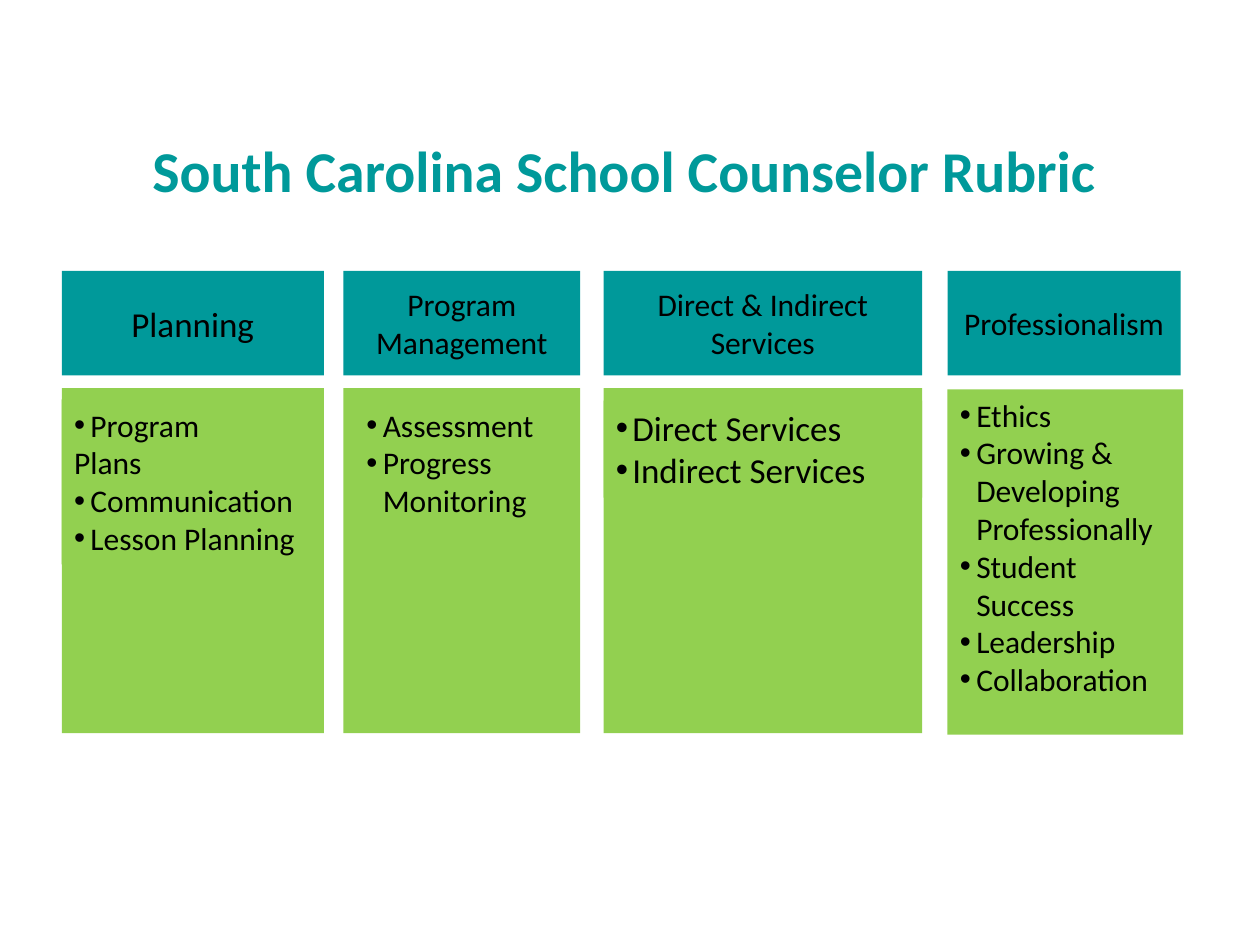
from dataclasses import dataclass

from lxml import etree
from pptx import Presentation
from pptx.dml.color import RGBColor
from pptx.enum.shapes import MSO_SHAPE
from pptx.enum.text import MSO_ANCHOR, PP_ALIGN
from pptx.oxml.ns import qn
from pptx.util import Inches, Pt

RECTANGLE = MSO_SHAPE.RECTANGLE
TOP, MIDDLE, BOTTOM = MSO_ANCHOR.TOP, MSO_ANCHOR.MIDDLE, MSO_ANCHOR.BOTTOM
LEFT, CENTER = PP_ALIGN.LEFT, PP_ALIGN.CENTER
GRID_COLUMNS, GRID_ROWS = 100, 75
HEADER_TOP, HEADER_HEIGHT = 21.5, 8.3
PANEL_TOP, PANEL_HEIGHT = 30.8, 27.4
BULLET_INDENT = Inches(0.13)


@dataclass(frozen=True)
class Theme:
    font: str = "Calibri"
    teal: str = "00999A"
    green: str = "92D050"
    ink: str = "000000"
    title: int = 33
    large: int = 20
    body: int = 18


@dataclass(frozen=True)
class Column:
    left: float
    width: float
    heading: str
    heading_size: int
    items: tuple
    item_size: int
    list_area: tuple
    has_panel: bool = True


THEME = Theme()
UNBULLETED = ("Plans",)
COLUMNS = (
    Column(4.9, 20.8, "Planning", THEME.large,
           ("Program", "Plans", "Communication", "Lesson Planning"),
           THEME.body, (4.9, 31.7, 20.7, 13.1)),
    Column(27.25, 18.8, "Program Management", THEME.body,
           ("Assessment", "Progress Monitoring"),
           THEME.body, (28.1, 31.7, 15.7, 10.1)),
    Column(47.9, 25.3, "Direct & Indirect Services", THEME.body,
           ("Direct Services", "Indirect Services"),
           THEME.large, (47.9, 31.8, 25.3, 7.7)),
    Column(75.2, 18.5, "Professionalism", THEME.body,
           ("Ethics", "Growing & Developing Professionally",
            "Student Success", "Leadership", "Collaboration"),
           THEME.body, (75.2, 30.9, 18.7, 27.4), False),
)


def place(deck, left, top, width, height):
    across = deck.slide_width / GRID_COLUMNS
    down = deck.slide_height / GRID_ROWS
    return [round(length) for length in
            (left * across, top * down, width * across, height * down)]


def add_block(deck, page, area, color):
    box = page.shapes.add_shape(RECTANGLE, *place(deck, *area))
    box.shadow.inherit = False
    box.fill.solid()
    box.fill.fore_color.rgb = RGBColor.from_string(color)
    box.line.fill.background()
    return box


def add_span(para, text, size, color, bold=False):
    span = para.add_run()
    span.text = text
    span.font.name = THEME.font
    span.font.size = Pt(size)
    span.font.bold = bold
    span.font.color.rgb = RGBColor.from_string(color)


def add_bullet(para):
    properties = para._p.get_or_add_pPr()
    properties.set("marL", str(BULLET_INDENT))
    properties.set("indent", str(-BULLET_INDENT))
    font = etree.SubElement(properties, qn("a:buFont"))
    font.set("typeface", "Arial")
    bullet = etree.SubElement(properties, qn("a:buChar"))
    bullet.set("char", "•")


def add_title(deck, page, text):
    box = page.shapes.add_textbox(*place(deck, 9, 2.2, 82, 14))
    frame = box.text_frame
    frame.word_wrap = True
    frame.vertical_anchor = BOTTOM
    frame.margin_left = Inches(0.31)
    frame.margin_top = frame.margin_right = frame.margin_bottom = 0
    para = frame.paragraphs[0]
    para.line_spacing = 0.85
    add_span(para, text, THEME.title, THEME.teal, True)


def add_heading(deck, page, column):
    area = (column.left, HEADER_TOP, column.width, HEADER_HEIGHT)
    frame = add_block(deck, page, area, THEME.teal).text_frame
    frame.word_wrap = True
    frame.vertical_anchor = MIDDLE
    para = frame.paragraphs[0]
    para.alignment = CENTER
    add_span(para, column.heading, column.heading_size, THEME.ink)


def add_list(deck, page, column):
    frame = add_block(deck, page, column.list_area, THEME.green).text_frame
    frame.word_wrap = True
    frame.vertical_anchor = TOP
    for index, item in enumerate(column.items):
        para = frame.add_paragraph() if index else frame.paragraphs[0]
        para.alignment = LEFT
        if item not in UNBULLETED:
            add_bullet(para)
        add_span(para, item, column.item_size, THEME.ink)


def add_column(deck, page, column):
    if column.has_panel:
        area = (column.left, PANEL_TOP, column.width, PANEL_HEIGHT)
        add_block(deck, page, area, THEME.green)
    add_heading(deck, page, column)
    add_list(deck, page, column)


def main():
    deck = Presentation()
    deck.slide_width, deck.slide_height = Inches(10), Inches(7.5)
    page = deck.slides.add_slide(deck.slide_layouts[6])
    add_title(deck, page, "South Carolina School Counselor Rubric")
    for column in COLUMNS:
        add_column(deck, page, column)
    deck.save("out.pptx")


if __name__ == "__main__":
    main()
